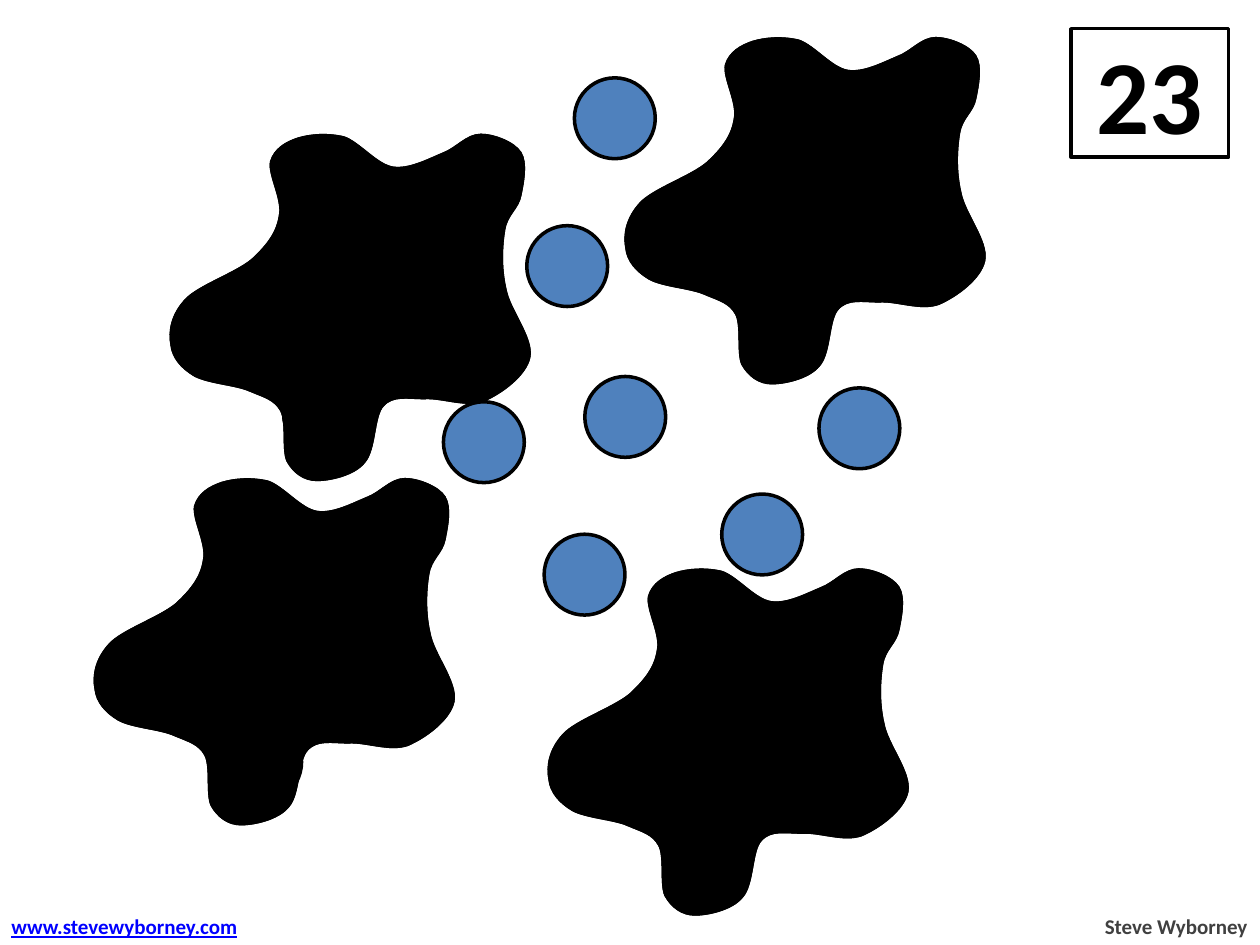
from typing import NamedTuple

from lxml import etree
from pptx import Presentation
from pptx import util as u
from pptx.dml.color import RGBColor
from pptx.enum import shapes, text
from pptx.oxml.ns import qn

BLACK, WHITE, BLUE = "000000", "FFFFFF", "4F81BD"
DOT_SIZE = 1.63
SPLAT_UNIT = 0.0254
SPLAT_WIDTH, SPLAT_HEIGHT = 273, 284


class Spot(NamedTuple):
    left: float
    top: float


class Credit(NamedTuple):
    wording: str
    left: float
    width: float
    color: str
    align: text.PP_ALIGN
    underline: bool


DOTS = [Spot(*place) for place in (
    (5.89, 3.3), (4.27, 5.51), (7.01, 12.67), (11.58, 1.57), (8.94, 8.1),
    (5.72, 7.54), (15.93, 14.55), (10.62, 4.55), (12.24, 14.86), (4.83, 10.41),
    (16.51, 7.82), (14.78, 2.57), (13.82, 12.62), (4.45, 14.55), (11.79, 7.59),
    (17.63, 3.86), (8.2, 4.93), (10.97, 10.77), (14.55, 9.96), (15.11, 5),
    (16.15, 11.86), (17.35, 1.35), (2.64, 12.73),
)]
SPLATS = [Spot(3.56, 2.59), Spot(2.03, 9.53), Spot(11.18, 11.35), Spot(12.73, 0.64)]
CREDITS = [
    Credit("Steve Wyborney", 22, 3.4, "404040", text.PP_ALIGN.RIGHT, False),
    Credit("www.stevewyborney.com", -0.02, 5.21, "0000FF", text.PP_ALIGN.LEFT, True),
]
SPLAT_START = (83, 20)
SPLAT_CURVES = [
    (89, 10), (97, 3), (107, 2), (117, 0), (130, 2), (142, 13),
    (153, 23), (163, 53), (174, 66), (186, 79), (196, 86), (209, 88),
    (222, 91), (242, 79), (252, 81), (262, 84), (267, 93), (270, 102),
    (273, 112), (274, 125), (271, 138), (267, 150), (249, 164), (247, 177),
    (245, 190), (253, 205), (258, 217), (262, 228), (273, 236), (273, 247),
    (273, 257), (267, 273), (259, 278), (251, 283), (236, 280), (226, 278),
    (215, 276), (211, 267), (198, 265), (186, 263), (168, 262), (151, 266),
    (134, 269), (112, 288), (97, 285), (83, 282), (69, 263), (63, 249),
    (58, 235), (66, 216), (65, 202), (65, 189), (68, 177), (59, 169),
    (51, 161), (24, 163), (14, 154), (4, 146), (0, 127), (0, 117),
    (0, 107), (6, 99), (15, 94), (24, 90), (46, 94), (55, 89),
    (64, 84), (66, 76), (71, 64), (76, 53), (77, 31), SPLAT_START,
]


def rgb(value: str) -> RGBColor:
    return RGBColor.from_string(value)


def paint(shape, fill: str) -> None:
    shape.shadow.inherit = False
    shape.fill.solid()
    shape.fill.fore_color.rgb = rgb(fill)
    shape.line.color.rgb = rgb(BLACK)
    shape.line.width = u.Pt(2)


def write(shape, wording: str, size: float, color: str,
          align: text.PP_ALIGN, underline: bool = False) -> None:
    shape.text_frame.text = wording
    paragraph = shape.text_frame.paragraphs[0]
    paragraph.alignment = align
    font = paragraph.runs[0].font
    font.name, font.size, font.bold = "Calibri", u.Pt(size), True
    font.underline = underline
    font.color.rgb = rgb(color)


def add_dots(slide, dots: list[Spot]) -> None:
    group = slide.shapes.add_group_shape()
    for dot in dots:
        circle = group.shapes.add_shape(
            shapes.MSO_SHAPE.OVAL, u.Cm(dot.left), u.Cm(dot.top),
            u.Cm(DOT_SIZE), u.Cm(DOT_SIZE))
        paint(circle, BLUE)


def add_total(slide, wording: str) -> None:
    total = slide.shapes.add_shape(
        shapes.MSO_SHAPE.RECTANGLE, u.Cm(21.59), u.Cm(0.58), u.Cm(3.18), u.Cm(2.59))
    paint(total, WHITE)
    total.text_frame.vertical_anchor = text.MSO_ANCHOR.MIDDLE
    write(total, wording, 60, BLACK, text.PP_ALIGN.CENTER)


def add_credit(slide, credit: Credit) -> None:
    box = slide.shapes.add_textbox(
        u.Cm(credit.left), u.Cm(18.29), u.Cm(credit.width), u.Cm(0.76))
    box.text_frame.word_wrap = False
    box.text_frame.auto_size = text.MSO_AUTO_SIZE.SHAPE_TO_FIT_TEXT
    write(box, credit.wording, 12, credit.color, credit.align, credit.underline)


def curve_outline(splat) -> None:
    outline = next(splat._element.iter(qn("a:path")))
    outline.set("w", str(SPLAT_WIDTH))
    outline.set("h", str(SPLAT_HEIGHT))
    segments = outline.findall(qn("a:lnTo"))
    for first in range(0, len(segments), 3):
        curve = etree.Element(qn("a:cubicBezTo"))
        segments[first].addprevious(curve)
        for segment in segments[first:first + 3]:
            curve.append(segment[0])
            outline.remove(segment)
    splat.width = u.Cm(SPLAT_WIDTH * SPLAT_UNIT)
    splat.height = u.Cm(SPLAT_HEIGHT * SPLAT_UNIT)


def add_splat(slide, spot: Spot, opacity: int) -> None:
    builder = slide.shapes.build_freeform(*SPLAT_START, scale=u.Cm(SPLAT_UNIT))
    builder.add_line_segments(SPLAT_CURVES, close=True)
    splat = builder.convert_to_shape(u.Cm(spot.left), u.Cm(spot.top))
    curve_outline(splat)
    splat.rotation = 270
    paint(splat, BLACK)
    if opacity < 100:
        color = splat._element.spPr.find(qn("a:solidFill"))[0]
        etree.SubElement(color, qn("a:alpha")).set("val", str(opacity * 1000))


def main() -> None:
    deck = Presentation()
    deck.slide_width, deck.slide_height = u.Cm(25.4), u.Cm(19.05)
    slide = deck.slides.add_slide(deck.slide_layouts[6])
    add_dots(slide, DOTS)
    add_total(slide, str(len(DOTS)))
    for credit in CREDITS:
        add_credit(slide, credit)
    for spot in SPLATS:
        for opacity in (100, 40):
            add_splat(slide, spot, opacity)
    deck.save("out.pptx")


if __name__ == "__main__":
    main()
